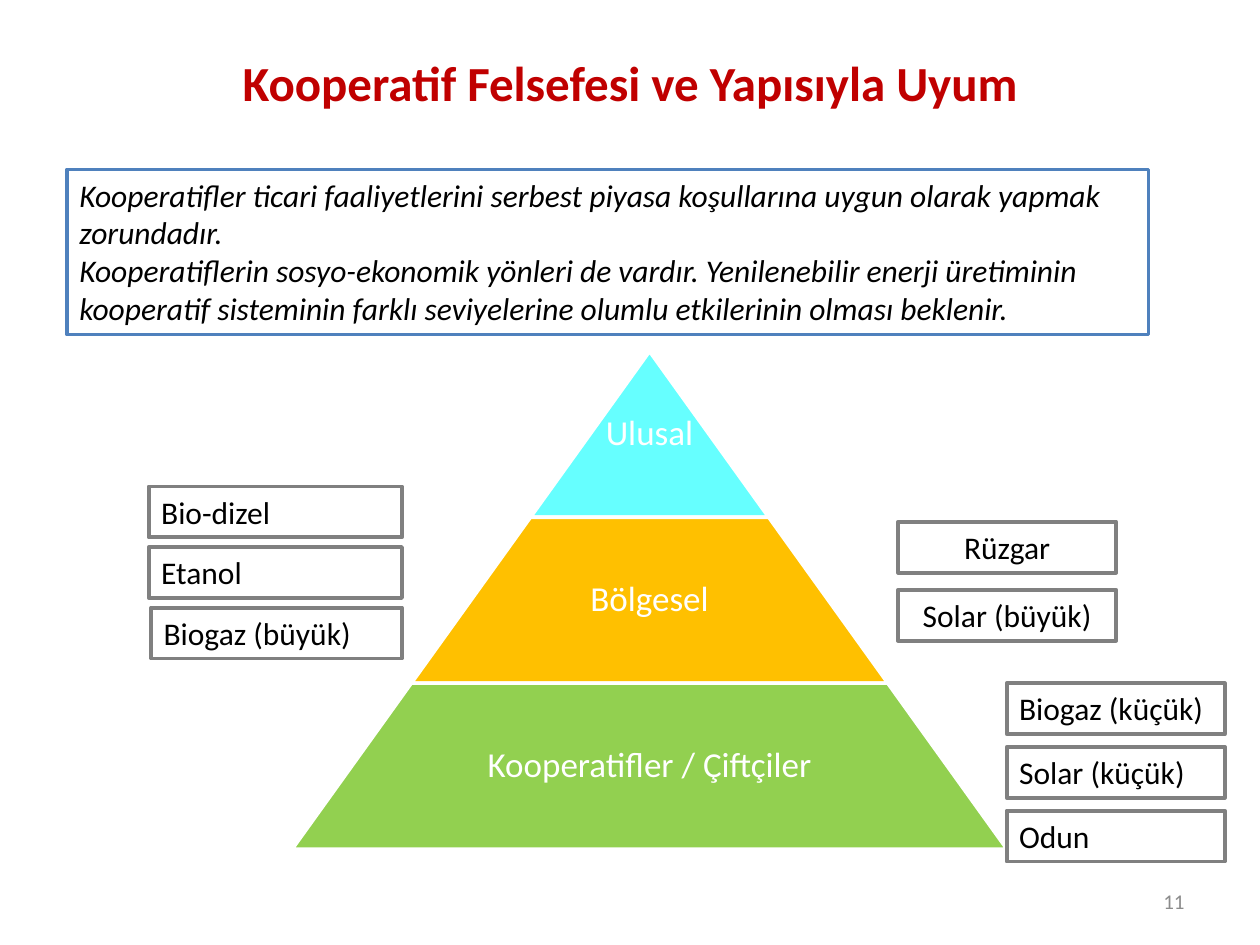
from dataclasses import dataclass

from pptx import Presentation
from pptx.dml.color import RGBColor
from pptx.enum.shapes import MSO_SHAPE
from pptx.enum.text import MSO_ANCHOR, MSO_AUTO_SIZE, PP_ALIGN
from pptx.slide import Slide
from pptx.text.text import TextFrame
from pptx.util import Pt


@dataclass(frozen=True)
class Theme:
    font: str = "Calibri"
    title: str = "C00000"
    text: str = "000000"
    white: str = "FFFFFF"
    intro_line: str = "4F81BD"
    label_line: str = "808080"
    page: str = "8C8C8C"
    title_size: float = 28
    tier_size: float = 20
    body_size: float = 18
    page_size: float = 12


@dataclass(frozen=True)
class Tier:
    name: str
    fill: str
    text_share: float  # width of the caption relative to the tier


@dataclass(frozen=True)
class LabelColumn:
    left: float
    top: float
    width: float
    pitch: float
    align: PP_ALIGN
    names: tuple[str, ...]


THEME = Theme()
PYRAMID_CENTER, PYRAMID_TOP = 371.2, 200.8
TIER_HEIGHT, TIER_STEP = 94.8, 136.1
LABEL_HEIGHT = 29.1

TIERS = (
    Tier("Ulusal", "66FFFF", 1),
    Tier("Bölgesel", "FFC000", 0.65),
    Tier("Kooperatifler / Çiftçiler", "92D050", 0.65),
)
LABEL_COLUMNS = (
    LabelColumn(85, 278, 144.7, 34.6, PP_ALIGN.LEFT, ("Bio-dizel", "Etanol")),
    LabelColumn(86.4, 347.2, 143.3, 0, PP_ALIGN.LEFT, ("Biogaz (büyük)",)),
    LabelColumn(513.2, 298.1, 124.6, 38.9, PP_ALIGN.CENTER,
                ("Rüzgar", "Solar (büyük)")),
    LabelColumn(575.3, 390.4, 124.6, 36.4, PP_ALIGN.LEFT,
                ("Biogaz (küçük)", "Solar (küçük)", "Odun")),
)
INTRO = (
    "Kooperatifler ticari faaliyetlerini serbest piyasa koşullarına uygun "
    "olarak yapmak zorundadır.",
    "Kooperatiflerin sosyo-ekonomik yönleri de vardır. Yenilenebilir enerji "
    "üretiminin kooperatif sisteminin farklı seviyelerine olumlu etkilerinin "
    "olması beklenir.",
)


def rgb(value: str) -> RGBColor:
    return RGBColor.from_string(value)


def write(frame: TextFrame, paragraphs: tuple[str, ...], size: float, color: str,
          align: PP_ALIGN, bold: bool = False, italic: bool = False) -> None:
    frame.word_wrap = True
    for index, words in enumerate(paragraphs):
        paragraph = frame.add_paragraph() if index else frame.paragraphs[0]
        paragraph.alignment = align
        run = paragraph.add_run()
        run.text = words
        run.font.name, run.font.size = THEME.font, Pt(size)
        run.font.bold, run.font.italic = bold, italic
        run.font.color.rgb = rgb(color)


def add_text(slide: Slide, left: float, top: float, width: float,
             height: float) -> TextFrame:
    frame = slide.shapes.add_textbox(
        Pt(left), Pt(top), Pt(width), Pt(height)).text_frame
    frame.vertical_anchor = MSO_ANCHOR.MIDDLE
    return frame


def add_framed_text(slide: Slide, left: float, top: float, width: float,
                    height: float, paragraphs: tuple[str, ...], line: str,
                    weight: float, align: PP_ALIGN = PP_ALIGN.LEFT,
                    fill: str | None = None, italic: bool = False) -> None:
    box = slide.shapes.add_textbox(Pt(left), Pt(top), Pt(width), Pt(height))
    box.line.color.rgb, box.line.width = rgb(line), Pt(weight)
    if fill:
        box.fill.solid()
        box.fill.fore_color.rgb = rgb(fill)
    write(box.text_frame, paragraphs, THEME.body_size, THEME.text, align,
          italic=italic)
    box.text_frame.auto_size = MSO_AUTO_SIZE.SHAPE_TO_FIT_TEXT


def add_tier(slide: Slide, level: int, tier: Tier) -> None:
    width = TIER_STEP * (level + 1)
    top = PYRAMID_TOP + TIER_HEIGHT * level
    band = slide.shapes.add_shape(
        MSO_SHAPE.TRAPEZOID, Pt(PYRAMID_CENTER - width / 2), Pt(top),
        Pt(width), Pt(TIER_HEIGHT))
    band.adjustments[0] = TIER_STEP / 2 / TIER_HEIGHT
    band.shadow.inherit = False
    band.fill.solid()
    band.fill.fore_color.rgb = rgb(tier.fill)
    band.line.color.rgb, band.line.width = rgb(THEME.white), Pt(2)

    # Caption, kept inside the sloping sides
    text_width = width * tier.text_share
    caption = add_text(slide, PYRAMID_CENTER - text_width / 2, top,
                       text_width, TIER_HEIGHT)
    caption.margin_left = caption.margin_right = Pt(2)
    caption.margin_top = caption.margin_bottom = Pt(2)
    write(caption, (tier.name,), THEME.tier_size, THEME.white, PP_ALIGN.CENTER)
    caption.paragraphs[0].line_spacing = 0.9
    caption.paragraphs[0].space_after = Pt(7)


def add_labels(slide: Slide, column: LabelColumn) -> None:
    for row, name in enumerate(column.names):
        add_framed_text(slide, column.left, column.top + row * column.pitch,
                        column.width, LABEL_HEIGHT, (name,),
                        THEME.label_line, 2.25, column.align)


def main() -> None:
    deck = Presentation()
    deck.slide_width, deck.slide_height = Pt(720), Pt(540)
    slide = deck.slides.add_slide(deck.slide_layouts[5])

    # Title
    title = slide.shapes.title
    title.left, title.top, title.width, title.height = (
        Pt(36), Pt(21.6), Pt(648), Pt(51))
    title.text_frame.vertical_anchor = MSO_ANCHOR.MIDDLE
    write(title.text_frame, ("Kooperatif Felsefesi ve Yapısıyla Uyum",),
          THEME.title_size, THEME.title, PP_ALIGN.CENTER, bold=True)

    # Introduction
    add_framed_text(slide, 38.3, 96.8, 618, 94.5, INTRO, THEME.intro_line, 2,
                    fill=THEME.white, italic=True)

    # Pyramid of levels
    for level, tier in enumerate(TIERS):
        add_tier(slide, level, tier)

    # Energy sources beside the pyramid
    for column in LABEL_COLUMNS:
        add_labels(slide, column)

    # Page number
    page = add_text(slide, 516, 500.5, 168, 28.8)
    write(page, ("11",), THEME.page_size, THEME.page, PP_ALIGN.RIGHT)

    deck.save("out.pptx")


if __name__ == "__main__":
    main()
